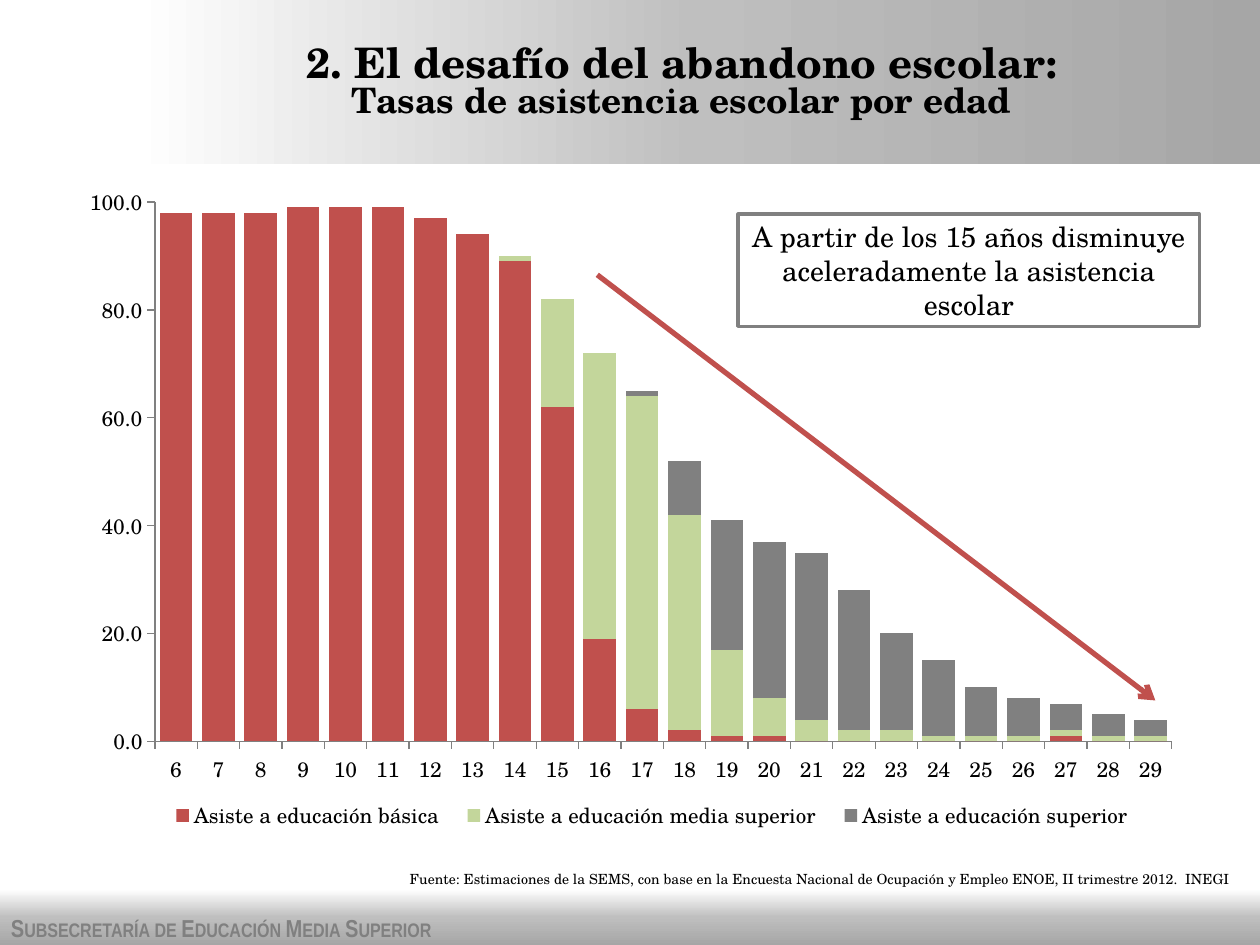
from lxml.etree import SubElement
from pptx import Presentation
from pptx.chart.data import CategoryChartData
from pptx.dml.color import RGBColor
from pptx.enum.chart import XL_CHART_TYPE, XL_LEGEND_POSITION, XL_TICK_MARK
from pptx.enum.shapes import MSO_CONNECTOR, MSO_SHAPE
from pptx.enum.text import MSO_ANCHOR, MSO_AUTO_SIZE, PP_ALIGN
from pptx.oxml.ns import qn
from pptx.util import Cm, Pt

BLACK = RGBColor(0x00, 0x00, 0x00)
WHITE = RGBColor(0xFF, 0xFF, 0xFF)
SILVER = RGBColor(0xBF, 0xBF, 0xBF)
MID_GRAY = RGBColor(0xA6, 0xA6, 0xA6)
GRAY = RGBColor(0x80, 0x80, 0x80)
RED = RGBColor(0xC0, 0x50, 0x4D)
GREEN = RGBColor(0xC3, 0xD6, 0x9B)
SERIF = "TeX Gyre Schola"
NARROW = "Arial Narrow"

AGES = range(6, 30)
ATTENDANCE = [
    ("Asiste a educación básica", RED,
     [98, 98, 98, 99, 99, 99, 97, 94, 89, 62, 19, 6,
      2, 1, 1, 0, 0, 0, 0, 0, 0, 1, 0, 0]),
    ("Asiste a educación media superior", GREEN,
     [0, 0, 0, 0, 0, 0, 0, 0, 1, 20, 53, 58,
      40, 16, 7, 4, 2, 2, 1, 1, 1, 1, 1, 1]),
    ("Asiste a educación superior", GRAY,
     [0, 0, 0, 0, 0, 0, 0, 0, 0, 0, 0, 1,
      10, 24, 29, 31, 26, 18, 14, 9, 7, 5, 4, 3]),
]


def place(shape, box):
    shape.left, shape.top, shape.width, shape.height = (Cm(v) for v in box)


def add_run(paragraph, text, size, font_name=SERIF, color=BLACK, bold=False):
    run = paragraph.add_run()
    run.text = text
    run.font.name, run.font.size, run.font.bold = font_name, Pt(size), bold
    run.font.color.rgb = color
    return run


def add_text_box(slide, box):
    frame = slide.shapes.add_textbox(*(Cm(v) for v in box)).text_frame
    frame.word_wrap = True
    return frame


def add_rectangle(slide, box):
    shape = slide.shapes.add_shape(MSO_SHAPE.RECTANGLE, *(Cm(v) for v in box))
    shape.shadow.inherit = False
    return shape


def add_band(slide, box, angle):
    """Borderless rectangle shading from white to gray."""
    band = add_rectangle(slide, box)
    band.line.fill.background()
    band.fill.gradient()
    band.fill.gradient_angle = angle
    stops = band._element.spPr.find(".//" + qn("a:gsLst"))
    for stop in list(stops):
        stops.remove(stop)
    for position, color in ((0, WHITE), (50, SILVER), (100, MID_GRAY)):
        stop = SubElement(stops, qn("a:gs"), pos=str(position * 1000))
        SubElement(stop, qn("a:srgbClr"), val=str(color))


def add_footer(slide, box):
    left, top, width, height = box
    add_band(slide, box, 270)
    frame = add_text_box(slide, (left - 0.03, top + 0.36, 16.4, height - 0.25))
    run = add_run(frame.paragraphs[0], "Subsecretaría de Educación Media Superior",
                  14, NARROW, GRAY, True)
    run._r.get_or_add_rPr().set("cap", "small")


def add_header(slide, box):
    left, top, width, height = box
    add_band(slide, box, 0)
    title = slide.shapes.title
    slide.shapes._spTree.append(title._element)  # in front of the band
    place(title, (left + 0.05, top + 0.08, width - 0.7, height - 0.12))
    frame = title.text_frame
    frame.word_wrap = True
    frame.auto_size = MSO_AUTO_SIZE.NONE
    frame.vertical_anchor = MSO_ANCHOR.MIDDLE
    lines = [("2. El desafío del abandono escolar:", 24),
             ("Tasas de asistencia escolar por edad", 20)]
    for index, (text, size) in enumerate(lines):
        paragraph = frame.add_paragraph() if index else frame.paragraphs[0]
        paragraph.alignment = PP_ALIGN.CENTER
        paragraph.line_spacing = 0.8
        paragraph.space_before = Pt(0)
        properties = paragraph._p.get_or_add_pPr()
        properties.set("marL", str(Cm(0.95)))
        properties.set("indent", str(-Cm(0.95)))
        add_run(paragraph, text, size, bold=True)


def set_layout(parent, x, y, w, h, inner=False):
    """Fix a chart part at fractions of the chart area."""
    layout = parent.get_or_add_layout() if hasattr(parent, "get_or_add_layout") else None
    if layout is None:
        layout = parent.find(qn("c:layout"))
    if layout is None:
        layout = SubElement(parent, qn("c:layout"))
        parent.insert(0 if inner else 1, layout)
    for child in list(layout):
        layout.remove(child)
    manual = SubElement(layout, qn("c:manualLayout"))
    settings = [("layoutTarget", "inner")] if inner else []
    settings += [("xMode", "edge"), ("yMode", "edge"),
                 ("x", x), ("y", y), ("w", w), ("h", h)]
    for tag, value in settings:
        SubElement(manual, qn("c:" + tag), val=str(value))


def add_attendance_chart(slide, box):
    data = CategoryChartData(number_format="#,##0.0")
    data.categories = [str(age) for age in AGES]
    for name, _, values in ATTENDANCE:
        data.add_series(name, values)
    chart = slide.shapes.add_chart(
        XL_CHART_TYPE.COLUMN_STACKED, *(Cm(v) for v in box), data).chart
    chart.has_title = False
    chart.font.name, chart.font.size = SERIF, Pt(12)
    chart.font.color.rgb = BLACK

    # Columns
    plot = chart.plots[0]
    plot.gap_width, plot.overlap = 30, 100
    plot.vary_by_categories = False
    for series, (_, color, _) in zip(plot.series, ATTENDANCE):
        series.format.fill.solid()
        series.format.fill.fore_color.rgb = color

    # Axes
    for axis in (chart.category_axis, chart.value_axis):
        axis.has_major_gridlines = False
        axis.major_tick_mark = XL_TICK_MARK.OUTSIDE
        axis.minor_tick_mark = XL_TICK_MARK.NONE
        axis.format.line.color.rgb = GRAY
    value_axis = chart.value_axis
    value_axis.minimum_scale, value_axis.maximum_scale = 0, 100
    value_axis.major_unit = 20
    value_axis.tick_labels.number_format = "#,##0.0"
    value_axis.tick_labels.number_format_is_linked = False

    # Legend and plot position
    chart.has_legend = True
    chart.legend.position = XL_LEGEND_POSITION.BOTTOM
    chart.legend.include_in_layout = False
    set_layout(chart.legend._element, 0.08, 0.92, 0.88, 0.06)
    set_layout(chart._chartSpace.chart.plotArea, 0.08, 0.04, 0.9, 0.8, inner=True)


def add_source_note(slide, box):
    paragraph = add_text_box(slide, box).paragraphs[0]
    paragraph.alignment = PP_ALIGN.RIGHT
    add_run(paragraph, "Fuente: Estimaciones de la SEMS, con base en la Encuesta Nacional "
            "de Ocupación y Empleo ENOE, II trimestre 2012.  INEGI", 8)


def add_trend_arrow(slide, box):
    left, top, width, height = box
    arrow = slide.shapes.add_connector(MSO_CONNECTOR.STRAIGHT, Cm(left), Cm(top),
                                       Cm(left + width), Cm(top + height))
    arrow.line.color.rgb, arrow.line.width = RED, Pt(3)
    SubElement(arrow.line._get_or_add_ln(), qn("a:tailEnd"), type="arrow")
    SubElement(arrow._element.spPr, qn("a:effectLst"))


def add_callout(slide, box):
    callout = add_rectangle(slide, box)
    callout.fill.background()
    callout.line.color.rgb, callout.line.width = GRAY, Pt(2)
    frame = callout.text_frame
    frame.word_wrap = True
    frame.vertical_anchor = MSO_ANCHOR.MIDDLE
    frame.paragraphs[0].alignment = PP_ALIGN.CENTER
    add_run(frame.paragraphs[0], "A partir de los 15 años disminuye aceleradamente "
            "la asistencia escolar", 16)


def main():
    presentation = Presentation()
    presentation.slide_width, presentation.slide_height = Cm(25.4), Cm(19.05)
    slide = presentation.slides.add_slide(presentation.slide_layouts[5])
    add_footer(slide, (0, 17.93, 25.4, 1.12))
    add_header(slide, (2.69, 0, 22.71, 3.3))
    add_attendance_chart(slide, (1.3, 3.53, 22.78, 13.59))
    add_source_note(slide, (3.15, 17.42, 21.92, 0.61))
    add_trend_arrow(slide, (12.04, 5.54, 11.25, 8.58))
    add_callout(slide, (14.88, 4.32, 9.3, 2.26))
    presentation.save("out.pptx")


if __name__ == "__main__":
    main()
